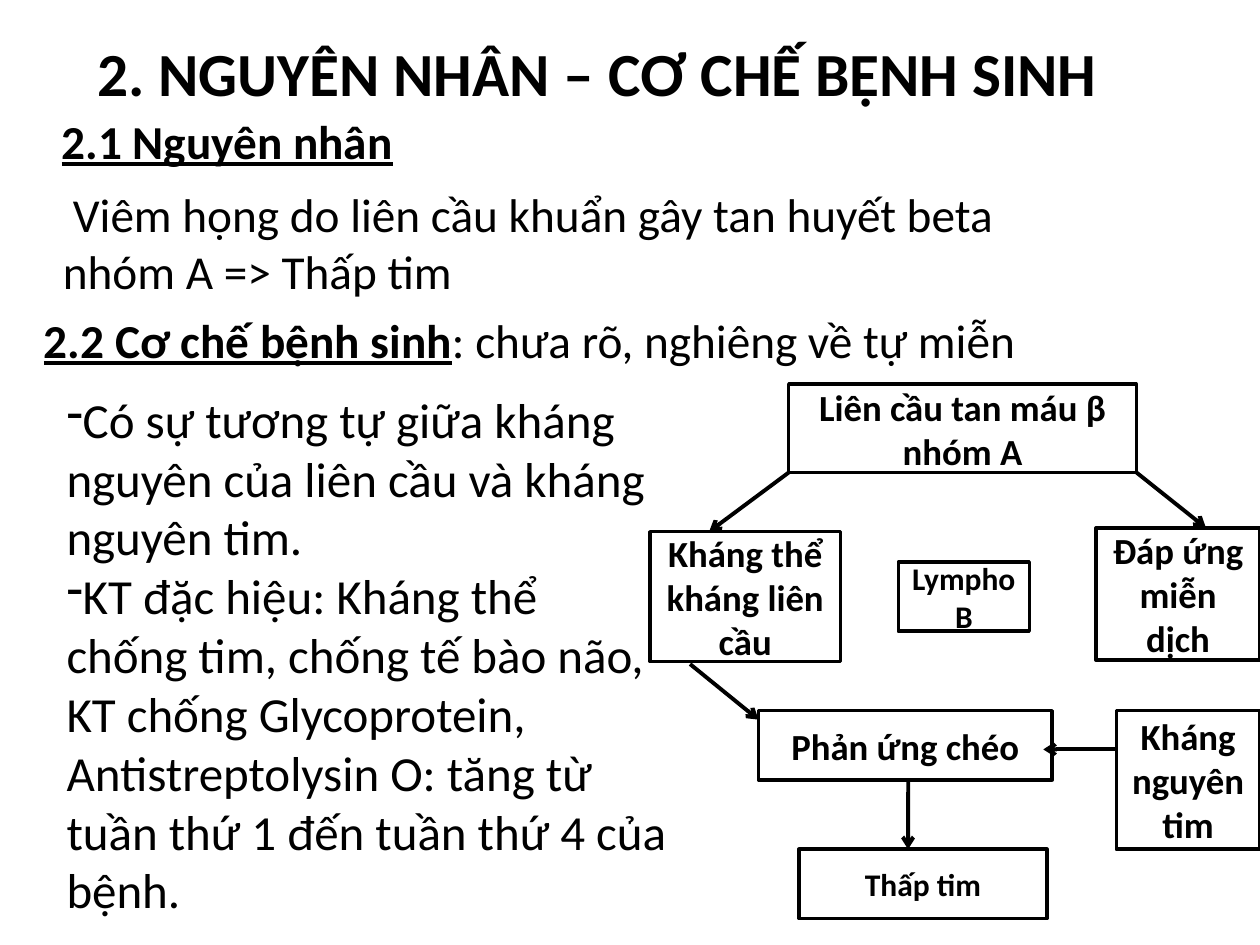
import pptx
import pptx.dml.color
import pptx.enum.shapes
import pptx.enum.text
import pptx.oxml.ns
import pptx.util
from lxml import etree

WIDTH, HEIGHT = 10, 7.5
COLUMNS, ROWS = 100, 75
BLACK, WHITE = "000000", "FFFFFF"
FONT = "Calibri"
ALIGN = pptx.enum.text.PP_ALIGN
ANCHOR = pptx.enum.text.MSO_ANCHOR


def color(value):
    return pptx.dml.color.RGBColor.from_string(value)


def across(columns):
    return pptx.util.Inches(columns * WIDTH / COLUMNS)


def down(rows):
    return pptx.util.Inches(rows * HEIGHT / ROWS)


def lengths(box):
    left, top, width, height = box
    return across(left), down(top), across(width), down(height)


def within(region, part):
    """Move a part, measured from its region's corner, onto the slide grid."""
    return region[0] + part[0], region[1] + part[1], part[2], part[3]


def add_xml(parent, tag, **attributes):
    return etree.SubElement(parent, pptx.oxml.ns.qn(tag), **attributes)


def write(frame, paragraphs, size=27, bold=False, underline=False,
          align=ALIGN.LEFT, anchor=ANCHOR.TOP, bullet=None, indent=0):
    """Each paragraph is a string or a list of (text, bold, underline) runs."""
    frame.word_wrap = True
    frame.auto_size = pptx.enum.text.MSO_AUTO_SIZE.NONE
    frame.vertical_anchor = anchor
    for index, content in enumerate(paragraphs):
        paragraph = frame.add_paragraph() if index else frame.paragraphs[0]
        paragraph.alignment = align
        if bullet or indent:
            properties = paragraph._p.get_or_add_pPr()
            properties.set("marL", "0")
            properties.set("indent", str(across(indent)))
            if bullet:
                add_xml(properties, "a:buChar", char=bullet)
        runs = [(content, bold, underline)] if isinstance(content, str) else content
        for text, run_bold, run_underline in runs:
            run = paragraph.add_run()
            run.text = text
            run.font.name = FONT
            run.font.size = pptx.util.Pt(size)
            run.font.bold = run_bold
            run.font.underline = run_underline
            run.font.color.rgb = color(BLACK)


def add_title(slide, box, text):
    title = slide.shapes.title
    title.left, title.top, title.width, title.height = lengths(box)
    write(title.text_frame, [text], size=35, bold=True)


def add_text(slide, box, paragraphs, **style):
    write(slide.shapes.add_textbox(*lengths(box)).text_frame, paragraphs, **style)


def add_step(slide, box, text, size):
    step = slide.shapes.add_shape(
        pptx.enum.shapes.MSO_SHAPE.RECTANGLE, *lengths(box))
    step.shadow.inherit = False
    step.fill.solid()
    step.fill.fore_color.rgb = color(WHITE)
    step.line.color.rgb = color(BLACK)
    step.line.width = pptx.util.Pt(2)
    write(step.text_frame, [text], size=size, bold=True,
          align=ALIGN.CENTER, anchor=ANCHOR.MIDDLE)


def point_on(box, share):
    left, top, width, height = box
    return across(left + width * share[0]), down(top + height * share[1])


def add_arrow(slide, start, end):
    arrow = slide.shapes.add_connector(
        pptx.enum.shapes.MSO_CONNECTOR.STRAIGHT, *start, *end)
    arrow.line.color.rgb = color(BLACK)
    arrow.line.width = pptx.util.Pt(2.25)
    add_xml(arrow.line._get_or_add_ln(), "a:tailEnd", type="arrow")
    add_xml(arrow._element.spPr, "a:effectLst")


def add_causes(slide, region):
    add_text(slide, within(region, (1.4, 0, 62.5, 5.6)), ["2.1 Nguyên nhân"],
             bold=True, underline=True)
    add_text(slide, within(region, (1.5, 5.8, 85.2, 10.1)),
             ["Viêm họng do liên cầu khuẩn gây tan huyết beta nhóm A => Thấp tim"],
             indent=0.8)


def add_mechanism(slide, region):
    add_text(slide, within(region, (0, 0, 79.2, 5.6)),
             [[("2.2 Cơ chế bệnh sinh", True, True),
               (": chưa rõ, nghiêng về tự miễn", False, False)]])
    add_text(slide, within(region, (1.8, 6.2, 49.6, 44)),
             ["Có sự tương tự giữa kháng nguyên của liên cầu và kháng nguyên tim.",
              "KT đặc hiệu: Kháng thể chống tim, chống tế bào não, KT chống "
              "Glycoprotein, Antistreptolysin O: tăng từ tuần thứ 1 đến tuần "
              "thứ 4 của bệnh."],
             size=28, bullet="-")


def add_pathway(slide, region):
    # Steps: text, text size, place in the region
    steps = {
        "strep": ("Liên cầu tan máu β nhóm A", 21, (11, 0, 27.6, 7)),
        "lymphocyte": ("Lympho B", 18, (19.7, 14.1, 10.4, 5.5)),
        "rheumatic": ("Thấp tim", 18, (11.8, 36.9, 19.7, 5.5)),
        "antibody": ("Kháng thể kháng liên cầu", 21, (0, 11.7, 15.1, 10.3)),
        "response": ("Đáp ứng miễn dịch", 21, (35.4, 11.4, 13, 10.5)),
        "cross": ("Phản ứng chéo", 21, (8.6, 25.9, 23.3, 5.5)),
        "antigen": ("Kháng nguyên tim", 21, (37, 25.9, 11.4, 11)),
    }
    boxes = {}
    for name, (text, size, part) in steps.items():
        boxes[name] = within(region, part)
        add_step(slide, boxes[name], text, size)

    # Arrows: ends given as shares of the step boxes they join
    arrows = [
        ("strep", (0, 1), "antibody", (0.31, 0)),
        ("strep", (1, 1), "response", (0.67, 0)),
        ("antibody", (0.21, 1.02), "cross", (0, 0.13)),
        ("cross", (0.51, 1), "rheumatic", (0.44, 0)),
        ("antigen", (0, 0.28), "cross", (0.97, 0.56)),
    ]
    for source, leaving, target, reaching in arrows:
        add_arrow(slide, point_on(boxes[source], leaving),
                  point_on(boxes[target], reaching))


def main():
    deck = pptx.Presentation()
    deck.slide_width = across(COLUMNS)
    deck.slide_height = down(ROWS)
    slide = deck.slides.add_slide(deck.slide_layouts.get_by_name("Title Only"))
    add_title(slide, (6.7, 2.3, 87.5, 6.9), "2. NGUYÊN NHÂN – CƠ CHẾ BỆNH SINH")
    add_causes(slide, (2.5, 8.4, 86.7, 15.9))
    add_mechanism(slide, (2.5, 24.2, 79.2, 50.2))
    add_pathway(slide, (51.6, 30.5, 48.4, 42.4))
    deck.save("out.pptx")


if __name__ == "__main__":
    main()
